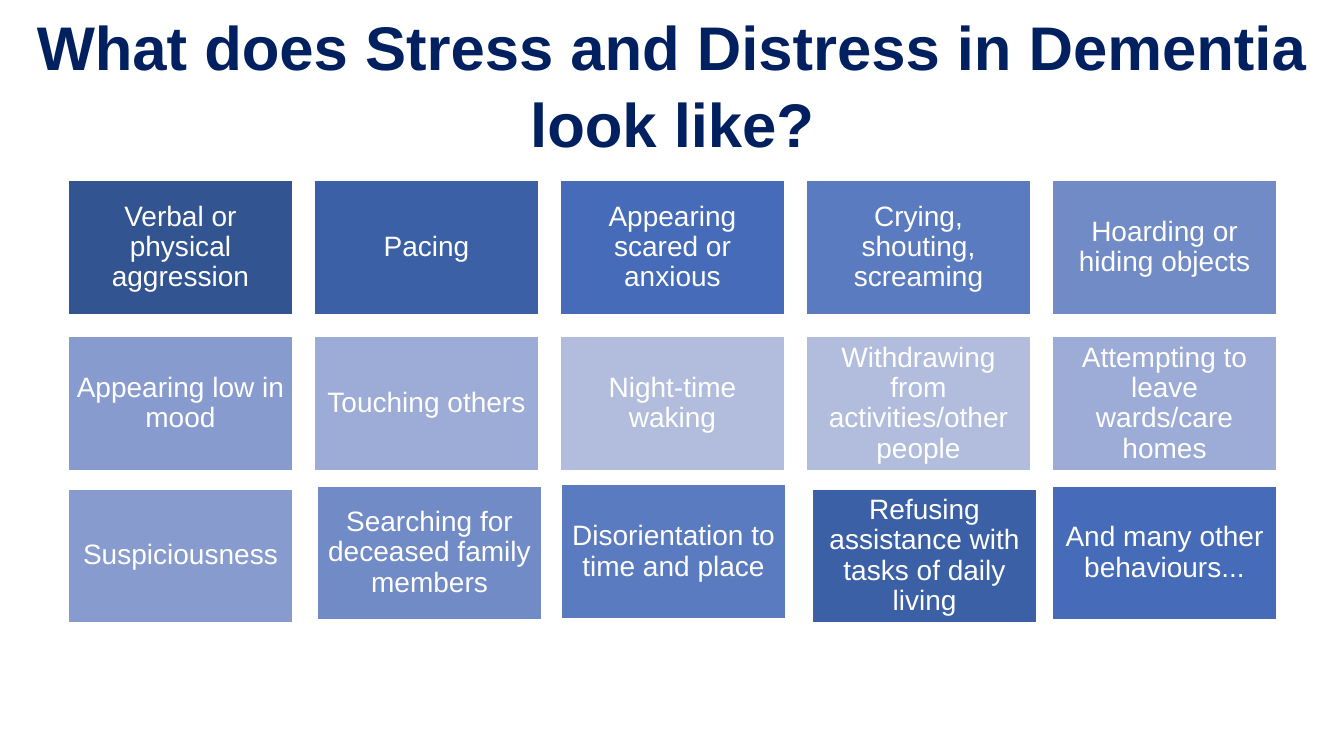
from pptx import Presentation
from pptx.dml.color import RGBColor
from pptx.enum.shapes import MSO_SHAPE
from pptx.enum.text import MSO_ANCHOR, MSO_AUTO_SIZE, PP_ALIGN
from pptx.util import Inches, Pt

CARD_WIDTH, CARD_HEIGHT = 2.22, 1.33
COLUMN_STEP = 2.44
ROW_TOPS = (1.79, 3.34, 4.82)
SHADES = ("325491", "3B60A5", "456BB9", "5B7BC0", "718BC7", "879BCE", "9DACD6", "B2BDDD")

# Behaviour and its index in SHADES
BEHAVIOURS = [
    [("Verbal or physical aggression", 0), ("Pacing", 1),
     ("Appearing scared or anxious", 2), ("Crying, shouting, screaming", 3),
     ("Hoarding or hiding objects", 4)],
    [("Appearing low in mood", 5), ("Touching others", 6), ("Night-time waking", 7),
     ("Withdrawing from activities/other people", 7),
     ("Attempting to leave wards/care homes", 6)],
    [("Suspiciousness", 5), ("Searching for deceased family members", 4),
     ("Disorientation to time and place", 3),
     ("Refusing assistance with tasks of daily living", 1),
     ("And many other behaviours...", 2)],
]
# Hand-placed shifts (right, down) of the cards in the last row
LAST_ROW_SHIFTS = [(0, 0.03), (0.03, 0), (0.01, -0.01), (0.06, 0.03), (0, 0)]


def color(hex_string):
    return RGBColor.from_string(hex_string)


def add_title(page, left, top, width, height):
    title = page.shapes.title
    title.left, title.top = Inches(left), Inches(top)
    title.width, title.height = Inches(width), Inches(height)
    frame = title.text_frame
    frame.text = "What does Stress and Distress in Dementia look like?"
    frame.word_wrap = True
    frame.auto_size = MSO_AUTO_SIZE.NONE
    frame.vertical_anchor = MSO_ANCHOR.TOP
    para = frame.paragraphs[0]
    para.alignment = PP_ALIGN.CENTER
    para.line_spacing = 1.05
    para.font.name, para.font.size, para.font.bold = "Arial", Pt(44), True
    para.font.color.rgb = color("002060")


def add_card(page, left, top, text, fill):
    card = page.shapes.add_shape(MSO_SHAPE.RECTANGLE, Inches(left), Inches(top),
                                 Inches(CARD_WIDTH), Inches(CARD_HEIGHT))
    card.shadow.inherit = False
    card.fill.solid()
    card.fill.fore_color.rgb = color(fill)
    card.line.color.rgb = color("FFFFFF")
    card.line.width = Pt(1)
    frame = card.text_frame
    frame.word_wrap = True
    frame.vertical_anchor = MSO_ANCHOR.MIDDLE
    frame.margin_left = frame.margin_right = Inches(0.08)
    frame.margin_top = frame.margin_bottom = Inches(0.08)
    frame.text = text
    para = frame.paragraphs[0]
    para.alignment = PP_ALIGN.CENTER
    para.line_spacing = 0.9
    para.font.name, para.font.size = "Arial", Pt(20)
    para.font.color.rgb = color("FFFFFF")


def add_cards(page, left):
    no_shifts = [(0, 0)] * len(LAST_ROW_SHIFTS)
    row_shifts = (no_shifts, no_shifts, LAST_ROW_SHIFTS)
    for top, behaviours, shifts in zip(ROW_TOPS, BEHAVIOURS, row_shifts):
        for column, ((text, shade), (right, down)) in enumerate(zip(behaviours, shifts)):
            add_card(page, left + column * COLUMN_STEP + right, top + down,
                     text, SHADES[shade])


def main():
    deck = Presentation()
    deck.slide_width, deck.slide_height = Inches(13.33), Inches(7.5)
    page = deck.slides.add_slide(deck.slide_layouts[5])
    add_title(page, 0.18, 0, 12.98, 1.58)
    add_cards(page, 0.68)
    deck.save("out.pptx")


if __name__ == "__main__":
    main()
